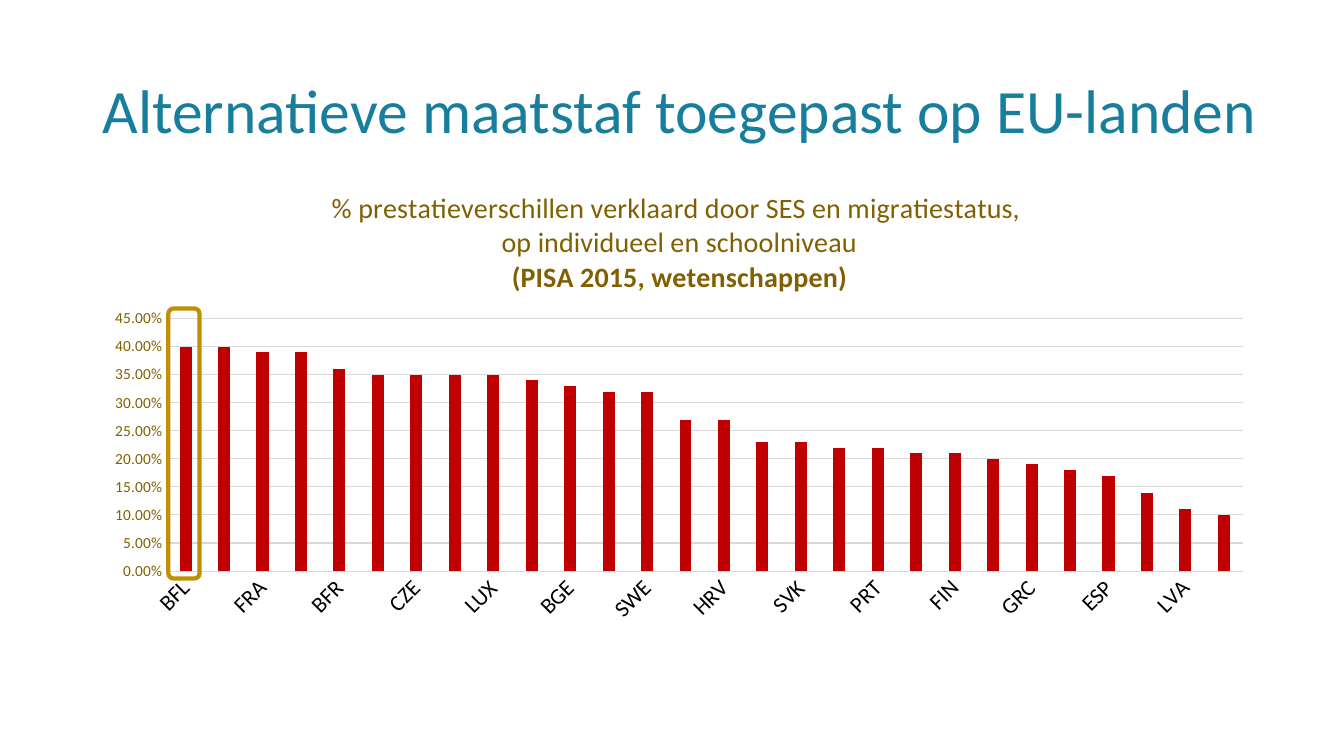
from lxml.etree import SubElement
from pptx import Presentation
from pptx.chart.data import CategoryChartData
from pptx.dml.color import RGBColor
from pptx.enum.chart import XL_CHART_TYPE, XL_TICK_MARK
from pptx.enum.shapes import MSO_SHAPE
from pptx.enum.text import MSO_ANCHOR, MSO_AUTO_SIZE, PP_ALIGN
from pptx.oxml import parse_xml
from pptx.oxml.ns import nsdecls, qn
from pptx.util import Inches, Pt

COLS, ROWS = 160, 90
TEAL, BROWN, GOLD = "177E9D", "806000", "BF9000"
RED, GREY, BLACK = "C00000", "D9D9D9", "000000"

# Share of performance differences explained, in percent
SHARES = {
    "BFL": 40, "NLD": 40, "FRA": 39, "DEU": 39, "BFR": 36, "BGR": 35, "CZE": 35,
    "AUT": 35, "LUX": 35, "MLT": 34, "BGE": 33, "SVN": 32, "SWE": 32, "ROU": 27,
    "HRV": 27, "DNK": 23, "SVK": 23, "ITA": 22, "PRT": 22, "LTU": 21, "FIN": 21,
    "HUN": 20, "GRC": 19, "IRL": 18, "ESP": 17, "POL": 14, "LVA": 11, "EST": 10,
}
CHART_TITLE = [
    ("% prestatieverschillen verklaard door SES en migratiestatus, ", False),
    ("op individueel en schoolniveau", False),
    ("(PISA 2015, wetenschappen)", True),
]


def rgb(code):
    return RGBColor.from_string(code)


class Deck:
    font = "Calibri"

    def __init__(self):
        self.prs = Presentation()
        self.prs.slide_width, self.prs.slide_height = Inches(13.333), Inches(7.5)
        self.s = self.prs.slides.add_slide(self.prs.slide_layouts[5])

    def box(self, col, row, cols, rows):
        dx, dy = self.prs.slide_width / COLS, self.prs.slide_height / ROWS
        return [int(v) for v in (col * dx, row * dy, cols * dx, rows * dy)]

    def style(self, font, size, color, bold=False):
        font.name, font.size, font.bold = self.font, Pt(size), bold
        font.color.rgb = rgb(color)

    def line(self, line, color, width):
        line.color.rgb, line.width = rgb(color), Pt(width)

    def title(self, text, *area):
        sp = self.s.shapes.title
        sp.left, sp.top, sp.width, sp.height = self.box(*area)
        tf = sp.text_frame
        tf.word_wrap, tf.auto_size = True, MSO_AUTO_SIZE.NONE
        tf.vertical_anchor = MSO_ANCHOR.MIDDLE
        p = tf.paragraphs[0]
        p.alignment, p.line_spacing = PP_ALIGN.LEFT, 0.9
        r = p.add_run()
        r.text = text
        self.style(r.font, 44, color=TEAL)

    def column_chart(self, shares, title, *area):
        data = CategoryChartData(number_format="0.00%")
        data.categories = list(shares)
        data.add_series("Series 1", [v / 100 for v in shares.values()])
        chart = self.s.shapes.add_chart(
            XL_CHART_TYPE.COLUMN_CLUSTERED, *self.box(*area), data).chart
        self.style(chart.font, 10, BLACK)
        chart.has_legend = False
        self.chart_title(chart, title)

        # Columns
        plot = chart.plots[0]
        plot.gap_width, plot.overlap, plot.vary_by_categories = 219, -27, False
        fill = plot.series[0].format.fill
        fill.solid()
        fill.fore_color.rgb = rgb(RED)

        # Axes
        cat, val = chart.category_axis, chart.value_axis
        for axis, size, color in ((cat, 16, BLACK), (val, 11, BROWN)):
            axis.major_tick_mark = axis.minor_tick_mark = XL_TICK_MARK.NONE
            self.style(axis.tick_labels.font, size, color)
        self.line(cat.format.line, GREY, 0.75)
        val.format.line.fill.background()
        val.minimum_scale, val.maximum_scale, val.major_unit = 0, 0.45, 0.05
        val.tick_labels.number_format = "0.00%"
        val.tick_labels.number_format_is_linked = False
        val.has_major_gridlines = True
        self.line(val.major_gridlines.format.line, GREY, 0.75)

        # Slanted labels
        cat._element.find(qn("c:txPr")).find(qn("a:bodyPr")).set("rot", "-2700000")
        self.place_plot(chart, x=0.063, y=0.32, w=0.917, h=0.548)

    def chart_title(self, chart, lines):
        chart.has_title = True
        chart.chart_title.include_in_layout = False
        tf = chart.chart_title.text_frame
        for i, (text, bold) in enumerate(lines):
            p = tf.add_paragraph() if i else tf.paragraphs[0]
            r = p.add_run()
            r.text = text
            self.style(r.font, 20, BROWN, bold)

    def place_plot(self, chart, **shares):
        area = chart._chartSpace.chart.plotArea
        for old in area.findall(qn("c:layout")):
            area.remove(old)
        layout = parse_xml(f"<c:layout {nsdecls('c')}/>")
        manual = SubElement(layout, qn("c:manualLayout"))
        values = {"layoutTarget": "inner", "xMode": "edge", "yMode": "edge", **shares}
        for tag, value in values.items():
            SubElement(manual, qn(f"c:{tag}")).set("val", str(value))
        area.insert(0, layout)

    def frame(self, color, width, *area):
        sp = self.s.shapes.add_shape(MSO_SHAPE.ROUNDED_RECTANGLE, *self.box(*area))
        sp.shadow.inherit = False
        sp.fill.background()
        self.line(sp.line, color, width)


def main():
    deck = Deck()
    # Heading
    deck.title("Alternatieve maatstaf toegepast op EU-landen", 11, 4.8, 142.8, 17.4)
    # Chart by country
    deck.column_chart(SHARES, CHART_TITLE, 11, 20.4, 139.8, 54.84)
    # Highlight around the first column
    deck.frame(GOLD, 3, 20.04, 36.72, 3.72, 32.16)
    deck.prs.save("out.pptx")


if __name__ == "__main__":
    main()
